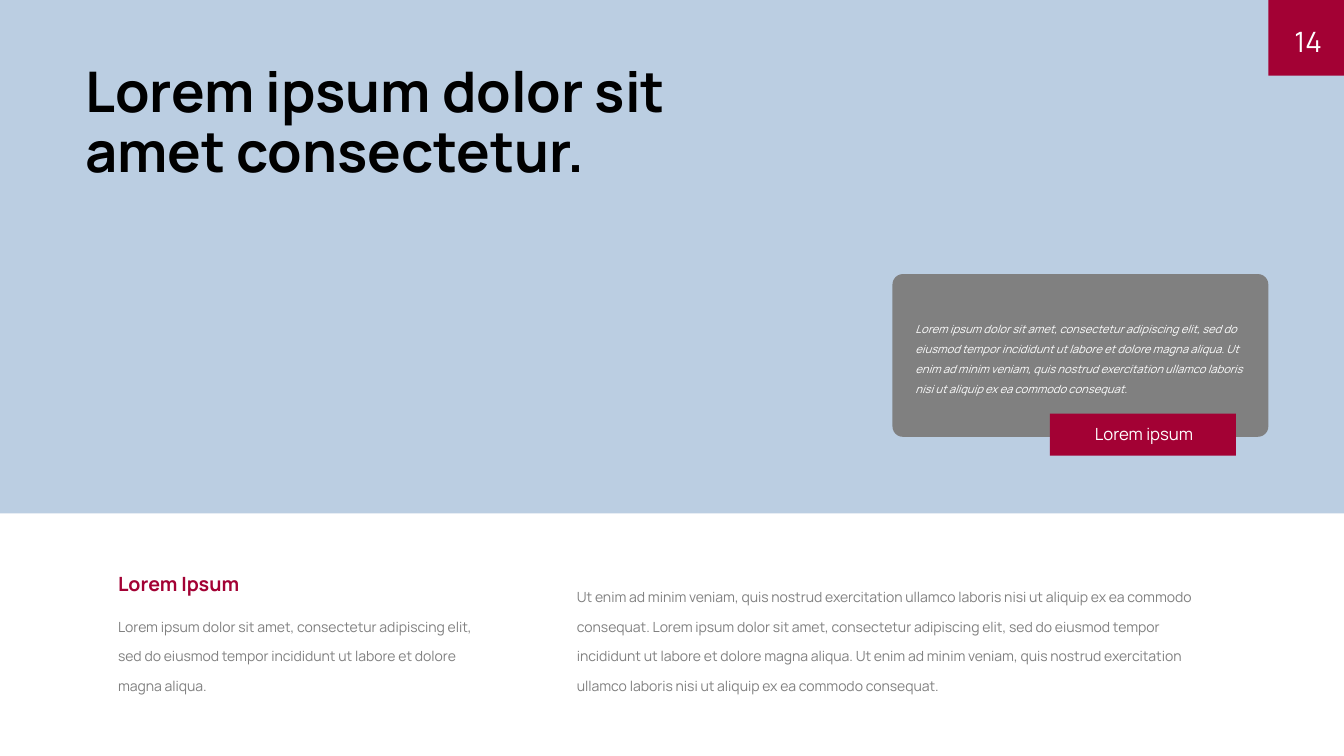
from pptx import Presentation
from pptx.dml.color import RGBColor
from pptx.enum.shapes import MSO_SHAPE
from pptx.enum.text import MSO_ANCHOR, PP_ALIGN
from pptx.util import Pt

PX = 9525
WHITE, BLACK, GREY = "FFFFFF", "000000", "808080"
RED, BLUE = "A30134", "BBCEE2"
FONT = "Manrope"

INTRO = ("Lorem ipsum dolor sit amet, consectetur adipiscing elit, sed do eiusmod "
         "tempor incididunt ut labore et dolore magna aliqua.")
ENIM = ("Ut enim ad minim veniam, quis nostrud exercitation ullamco laboris nisi ut "
        "aliquip ex ea commodo consequat.")


def tint(color, code):
    color.rgb = RGBColor.from_string(code)


def scale(box):
    return [n * PX for n in box]


def block(slide, box, fill, kind=MSO_SHAPE.RECTANGLE):
    shape = slide.shapes.add_shape(kind, *scale(box))
    shape.shadow.inherit = False
    shape.fill.solid()
    tint(shape.fill.fore_color, fill)
    shape.line.fill.background()
    return shape


def write(shape, text, size, color, align=PP_ALIGN.LEFT, lead=1.0,
          bold=False, italic=False, anchor=MSO_ANCHOR.TOP, inset=None):
    """Fill a shape with one paragraph; inset is one px margin for all sides."""
    frame = shape.text_frame
    frame.word_wrap = True
    frame.vertical_anchor = anchor
    if inset is not None:
        frame.margin_left = frame.margin_right = inset * PX
        frame.margin_top = frame.margin_bottom = inset * PX
    para = frame.paragraphs[0]
    para.alignment = align
    para.line_spacing = lead
    run = para.add_run()
    run.text = text
    font = run.font
    font.name, font.size = FONT, Pt(size)
    font.bold, font.italic = bold, italic
    tint(font.color, color)


def label(slide, box, text, size, color, **style):
    write(slide.shapes.add_textbox(*scale(box)), text, size, color, **style)


def quote(slide, box, text):
    card = block(slide, box, GREY, MSO_SHAPE.ROUNDED_RECTANGLE)
    card.adjustments[0] = 0.064
    write(card, text, 8, WHITE, lead=1.5, italic=True,
          anchor=MSO_ANCHOR.MIDDLE, inset=19)


def main():
    deck = Presentation()
    deck.slide_width, deck.slide_height = 1280 * PX, 720 * PX
    slide = deck.slides.add_slide(deck.slide_layouts[6])

    block(slide, (0, 0, 1280, 489), BLUE)
    block(slide, (1208, 0, 72, 72), RED)
    label(slide, (1206, 6, 53, 66), "14", 20, WHITE, align=PP_ALIGN.RIGHT,
          anchor=MSO_ANCHOR.MIDDLE, inset=0)
    label(slide, (72, 56, 667, 137), "Lorem ipsum dolor sit amet consectetur.",
          40, BLACK, lead=0.9, bold=True)

    label(slide, (540, 544, 637, 120), f"{ENIM} {INTRO} {ENIM}", 10, GREY, lead=1.75)
    label(slide, (103, 540, 380, 32), "Lorem Ipsum", 14, RED, bold=True)
    label(slide, (103, 572, 380, 91), INTRO, 10, GREY, lead=1.75)

    quote(slide, (850, 261, 358, 155), f"{INTRO} {ENIM}")
    block(slide, (1000, 394, 177, 40), RED)
    label(slide, (1012, 399, 155, 29), "Lorem ipsum", 12, WHITE,
          align=PP_ALIGN.CENTER)

    deck.save("out.pptx")


if __name__ == "__main__":
    main()
